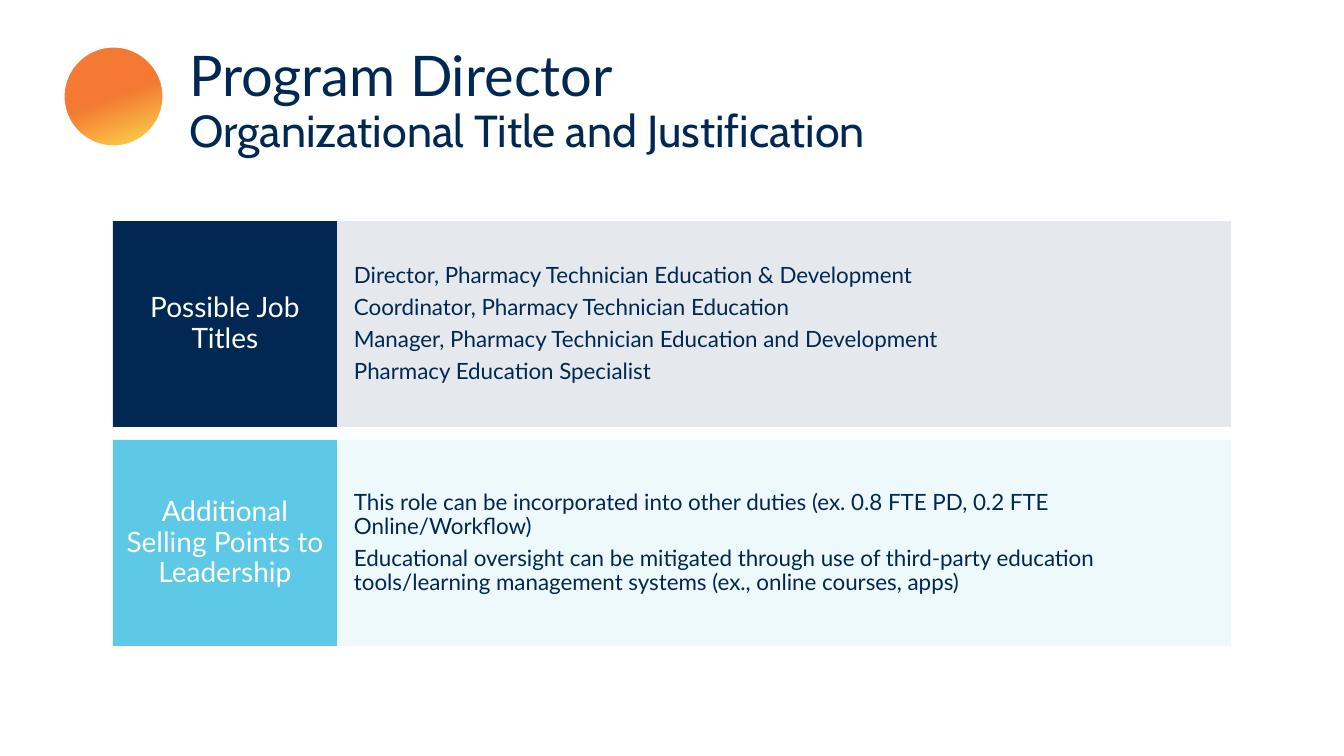
from dataclasses import dataclass

from lxml import etree
from pptx import Presentation
from pptx.dml.color import RGBColor
from pptx.enum.shapes import MSO_SHAPE
from pptx.enum.text import MSO_ANCHOR, MSO_AUTO_SIZE, PP_ALIGN
from pptx.oxml.ns import qn
from pptx.util import Emu, Pt

RECT, OVAL = MSO_SHAPE.RECTANGLE, MSO_SHAPE.OVAL
MIDDLE = MSO_ANCHOR.MIDDLE
LEFT, CENTER = PP_ALIGN.LEFT, PP_ALIGN.CENTER
NO_FIT = MSO_AUTO_SIZE.NONE
EMU_PER_PX = 914400 / 100.8


@dataclass(frozen=True)
class Theme:
    navy: str = "002852"
    sky: str = "5DC9E7"
    white: str = "FFFFFF"
    orange: str = "F47932"
    yellow: str = "FADC4E"
    font: str = "Lato"
    subtitle_font: str = "Cabin"
    title_size: int = 40
    subtitle_size: int = 32
    label_size: int = 20
    body_size: int = 16
    line_spacing: float = 0.9
    space_after: float = 0.35
    tint: int = 10


def px(n):
    return Emu(round(n * EMU_PER_PX))


def rgb(color):
    return RGBColor.from_string(color)


class SlideBuilder:
    def __init__(self, slide, theme):
        self.slide = slide
        self.theme = theme

    def set_font(self, font, name, size, color):
        font.name = name
        font.size = Pt(size)
        font.color.rgb = rgb(color)

    def title(self, x, y, w, h, heading, subtitle):
        t = self.theme
        sp = self.slide.shapes.title
        sp.left, sp.top, sp.width, sp.height = map(px, (x, y, w, h))
        tf = sp.text_frame
        tf.auto_size = NO_FIT
        tf.vertical_anchor = MIDDLE
        p = tf.paragraphs[0]
        p.alignment = LEFT
        p.line_spacing = t.line_spacing
        p.font.size = Pt(t.title_size)
        r = p.add_run()
        r.text = heading
        self.set_font(r.font, t.font, t.title_size, t.navy)
        p.add_line_break()
        r = p.add_run()
        r.text = subtitle
        self.set_font(r.font, t.subtitle_font, t.subtitle_size, t.navy)

    def panel(self, x, y, w, h, fill, lines, size, color, align, inset, alpha=100):
        t = self.theme
        sp = self.slide.shapes.add_shape(RECT, *map(px, (x, y, w, h)))
        sp.shadow.inherit = False
        sp.fill.solid()
        sp.fill.fore_color.rgb = rgb(fill)
        sp.line.fill.background()
        if alpha < 100:
            clr = sp.fill._xPr.find(qn("a:solidFill"))[0]
            etree.SubElement(clr, qn("a:alpha")).set("val", str(alpha * 1000))
        tf = sp.text_frame
        tf.word_wrap = True
        tf.vertical_anchor = MIDDLE
        tf.margin_left = tf.margin_right = px(inset[0])
        tf.margin_top = tf.margin_bottom = px(inset[1])
        for i, line in enumerate(lines):
            p = tf.add_paragraph() if i else tf.paragraphs[0]
            p.text = line
            p.alignment = align
            p.line_spacing = t.line_spacing
            p.space_after = Pt(size * t.space_after)
            self.set_font(p.font, t.font, size, color)

    def badge(self, x, y, d):
        t = self.theme
        sp = self.slide.shapes.add_shape(OVAL, *map(px, (x, y, d, d)))
        sp.shadow.inherit = False
        sp.fill.gradient()
        sp.fill.gradient_angle = 290
        stops = ((0.5, t.orange), (1, t.yellow))
        for stop, (position, color) in zip(sp.fill.gradient_stops, stops):
            stop.position = position
            stop.color.rgb = rgb(color)
        sp.line.color.rgb = rgb(t.white)
        sp.line.width = Pt(2.25)


def main():
    t = Theme()
    prs = Presentation()
    prs.slide_width, prs.slide_height = px(1344), px(756)
    s = prs.slides.add_slide(prs.slide_layouts[5])
    b = SlideBuilder(s, t)

    b.title(179, 31, 1073, 143, "Program Director",
            "Organizational Title and Justification")

    rows = [
        ("Possible Job Titles", t.navy, [
            "Director, Pharmacy Technician Education & Development",
            "Coordinator, Pharmacy Technician Education",
            "Manager, Pharmacy Technician Education and Development",
            "Pharmacy Education Specialist",
        ]),
        ("Additional Selling Points to Leadership", t.sky, [
            "This role can be incorporated into other duties "
            "(ex. 0.8 FTE PD, 0.2 FTE Online/Workflow)",
            "Educational oversight can be mitigated through use of third-party "
            "education tools/learning management systems "
            "(ex., online courses, apps)",
        ]),
    ]
    left, top, label_w, body_w, row_h, gap = 113, 221, 224, 894, 206, 13
    for i, (label, color, lines) in enumerate(rows):
        y = top + i * (row_h + gap)
        b.panel(left + label_w, y, body_w, row_h, color, lines,
                t.body_size, t.navy, LEFT, (17, 52), t.tint)
        b.panel(left, y, label_w, row_h, color, [label],
                t.label_size, t.white, CENTER, (12, 20))

    b.badge(63, 46, 101)
    prs.save("out.pptx")


if __name__ == "__main__":
    main()
